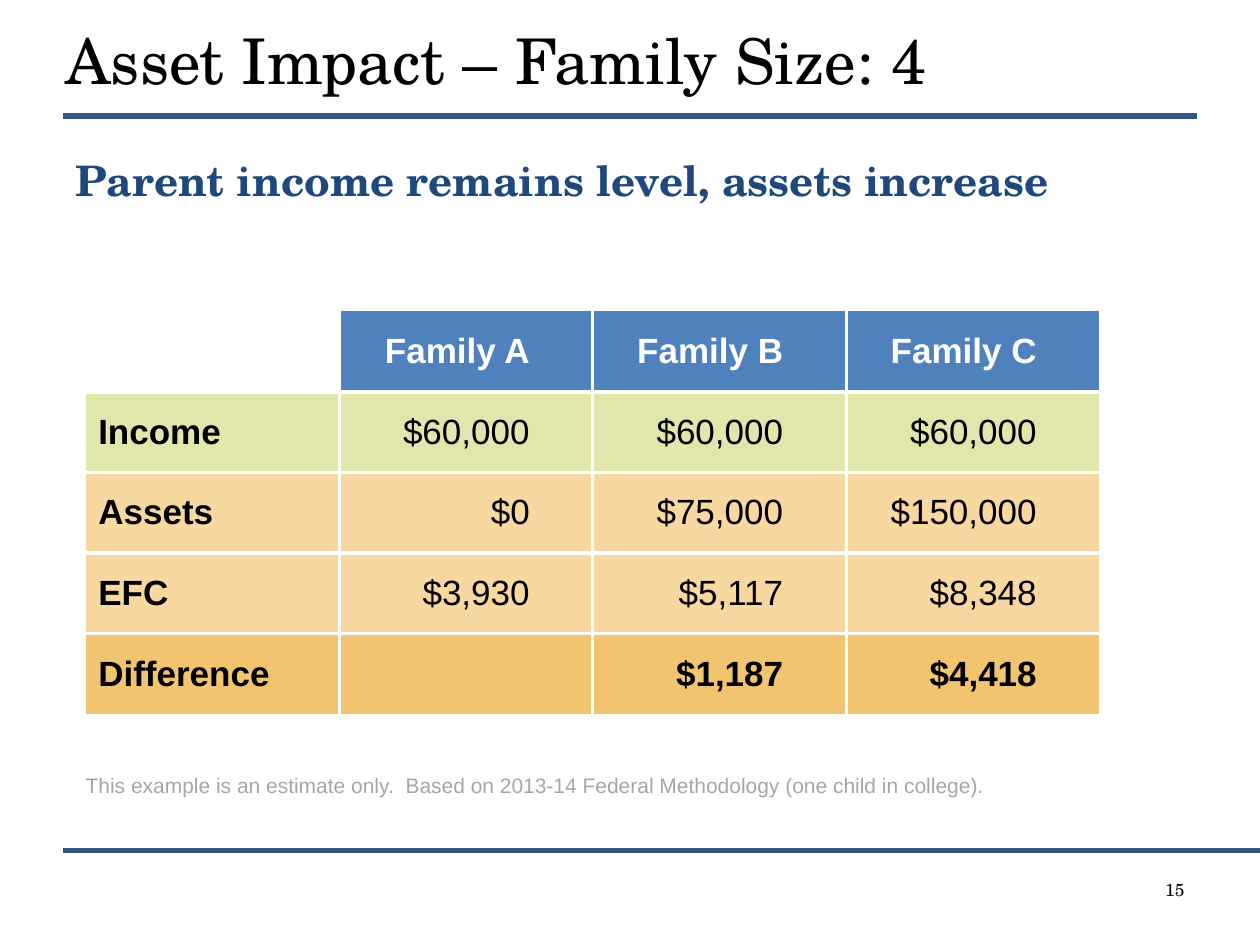
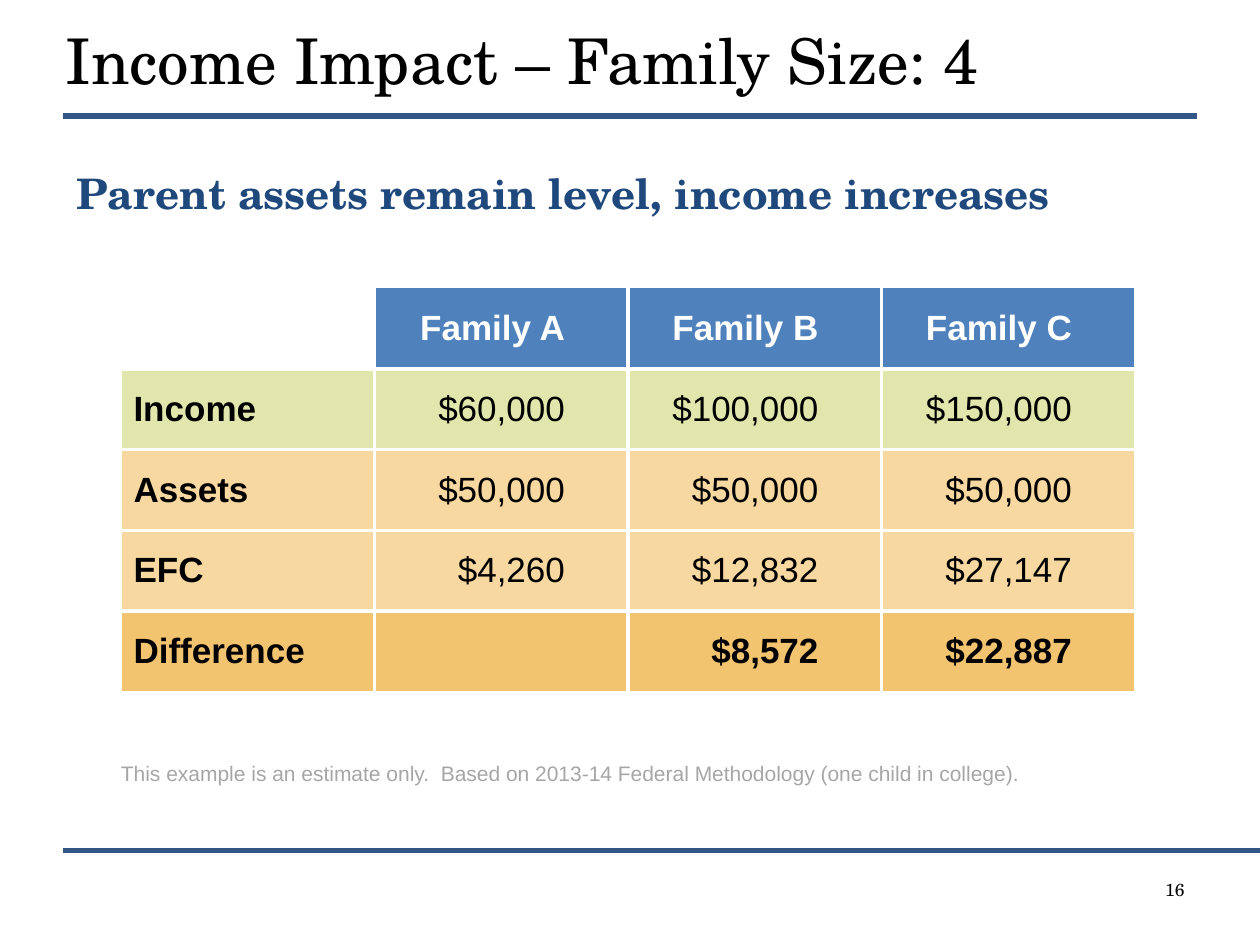
from dataclasses import dataclass

from lxml.etree import SubElement
from pptx import Presentation
from pptx.dml.color import RGBColor
from pptx.enum.shapes import MSO_CONNECTOR
from pptx.enum.text import MSO_ANCHOR, MSO_AUTO_SIZE, PP_ALIGN
from pptx.oxml.ns import qn
from pptx.util import Inches, Pt

HEADERS = ["", "Family A", "Family B", "Family C"]
NOTE = "This example is an estimate only.  Based on 2013-14 Federal Methodology (one child in college)."
SLIDES = [
    {
        "number": "15",
        "title": "Asset Impact – Family Size: 4",
        "lead": "Parent income remains level, assets increase",
        "lead_box": (0.5, 1.18, 9, 0.49),
        "table_at": (0.68, 2.46),
        "note_box": (0.68, 6.08, 8.73, 0.3),
        "rows": [
            ["Income", "$60,000", "$60,000", "$60,000"],
            ["Assets", "$0", "$75,000", "$150,000"],
            ["EFC", "$3,930", "$5,117", "$8,348"],
            ["Difference", "", "$1,187", "$4,418"],
        ],
    },
    {
        "number": "16",
        "title": "Income Impact – Family Size: 4",
        "lead": "Parent assets remain level, income increases",
        "lead_box": (0.51, 1.28, 9, 0.69),
        "table_at": (0.96, 2.28),
        "note_box": (0.96, 5.99, 8.46, 0.3),
        "rows": [
            ["Income", "$60,000", "$100,000", "$150,000"],
            ["Assets", "$50,000", "$50,000", "$50,000"],
            ["EFC", "$4,260", "$12,832", "$27,147"],
            ["Difference", "", "$8,572", "$22,887"],
        ],
    },
]


@dataclass(frozen=True)
class Theme:
    serif: str = "TeX Gyre Schola"
    sans: str = "Arial"
    black: str = "000000"
    white: str = "FFFFFF"
    rule: str = "335687"
    lead: str = "1F497D"
    note: str = "A6A6A6"
    header: str = "4F81BD"
    row_fills: tuple = ("E1E6AC", "F7D8A0", "F7D8A0", "F3C470")
    title_size: int = 36
    lead_size: int = 24
    table_size: int = 20
    note_size: int = 12
    number_size: int = 10
    border: float = 2.25


T = Theme()
TITLE_BOX = (0.42, 0.08, 9, 0.78)
NUMBER_BOX = (7.17, 6.93, 2.33, 0.4)
RULES = [(0.5, 9.5, 0.92, 3), (0.5, 10, 6.75, 2.5)]
TABLE_WIDTH = 8.05
HEADER_HEIGHT, ROW_HEIGHT = 0.65, 0.64


def write(tf, text, font, size, color, bold=False, align=PP_ALIGN.LEFT):
    p = tf.paragraphs[0]
    p.alignment = align
    r = p.add_run()
    r.text = text
    r.font.name = font
    r.font.size = Pt(size)
    r.font.bold = bold
    r.font.color.rgb = RGBColor.from_string(color)
    return p


def place(sp, box):
    sp.left, sp.top, sp.width, sp.height = map(Inches, box)
    tf = sp.text_frame
    tf.word_wrap = True
    tf.auto_size = MSO_AUTO_SIZE.NONE
    return tf


def add_text_box(s, box):
    return place(s.shapes.add_textbox(0, 0, 0, 0), box)


def add_rule(s, x1, x2, y, weight):
    line = s.shapes.add_connector(
        MSO_CONNECTOR.STRAIGHT, Inches(x1), Inches(y), Inches(x2), Inches(y))
    line.line.color.rgb = RGBColor.from_string(T.rule)
    line.line.width = Pt(weight)
    SubElement(line._element.spPr, qn("a:effectLst"))


def add_lead(s, text, box):
    tf = place(s.placeholders[1], box)
    tf.vertical_anchor = MSO_ANCHOR.TOP
    pPr = tf.paragraphs[0]._p.get_or_add_pPr()
    pPr.set("marL", str(Inches(0.38)))
    pPr.set("indent", str(Inches(-0.38)))
    SubElement(pPr, qn("a:buNone"))
    p = write(tf, text, T.serif, T.lead_size, T.lead, bold=True)
    p.space_before = Pt(0)


def add_borders(cell, sides):
    tcPr = cell._tc.get_or_add_tcPr()
    for side in sides:
        ln = SubElement(tcPr, qn(f"a:ln{side}"), w=str(Pt(T.border)))
        fill = SubElement(ln, qn("a:solidFill"))
        SubElement(fill, qn("a:srgbClr"), val=T.white)


def format_cell(cell, text, row, col, last_row, last_col):
    inner = {"L": col > 0, "R": col < last_col, "T": row > 0, "B": row < last_row}
    add_borders(cell, [side for side, shown in inner.items() if shown])
    if row == col == 0:
        cell.fill.background()
    else:
        cell.fill.solid()
        color = T.row_fills[row - 1] if row else T.header
        cell.fill.fore_color.rgb = RGBColor.from_string(color)
    cell.vertical_anchor = MSO_ANCHOR.MIDDLE
    cell.margin_left = Inches(0.1 if row else 0.2)
    cell.margin_right = Inches(0.5 if col else 0.1)
    if text:
        write(cell.text_frame, text, T.sans, T.table_size,
              T.black if row else T.white,
              bold=row in (0, last_row) or col == 0,
              align=PP_ALIGN.RIGHT if col else PP_ALIGN.LEFT)


def add_family_table(s, rows, at):
    data = [HEADERS, *rows]
    heights = [HEADER_HEIGHT] + [ROW_HEIGHT] * len(rows)
    x, y = at
    table = s.shapes.add_table(
        len(data), len(HEADERS), Inches(x), Inches(y),
        Inches(TABLE_WIDTH), Inches(sum(heights))).table
    table.first_row = table.horz_banding = False
    for column in table.columns:
        column.width = Inches(TABLE_WIDTH / len(HEADERS))
    for i, (values, height) in enumerate(zip(data, heights)):
        table.rows[i].height = Inches(height)
        for j, text in enumerate(values):
            format_cell(table.cell(i, j), text, i, j, len(rows), len(HEADERS) - 1)


def add_note(s, box):
    tf = add_text_box(s, box)
    tf.margin_left = 0
    write(tf, NOTE, T.sans, T.note_size, T.note)


def build_slide(prs, content):
    s = prs.slides.add_slide(prs.slide_layouts[1])
    write(add_text_box(s, NUMBER_BOX), content["number"], T.serif,
          T.number_size, T.black, align=PP_ALIGN.RIGHT)
    for rule in RULES:
        add_rule(s, *rule)
    tf = place(s.shapes.title, TITLE_BOX)
    tf.vertical_anchor = MSO_ANCHOR.MIDDLE
    write(tf, content["title"], T.serif, T.title_size, T.black)
    add_lead(s, content["lead"], content["lead_box"])
    add_family_table(s, content["rows"], content["table_at"])
    add_note(s, content["note_box"])


def main():
    prs = Presentation()
    prs.slide_width, prs.slide_height = Inches(10), Inches(7.5)
    for content in SLIDES:
        build_slide(prs, content)
    prs.save("out.pptx")


if __name__ == "__main__":
    main()
